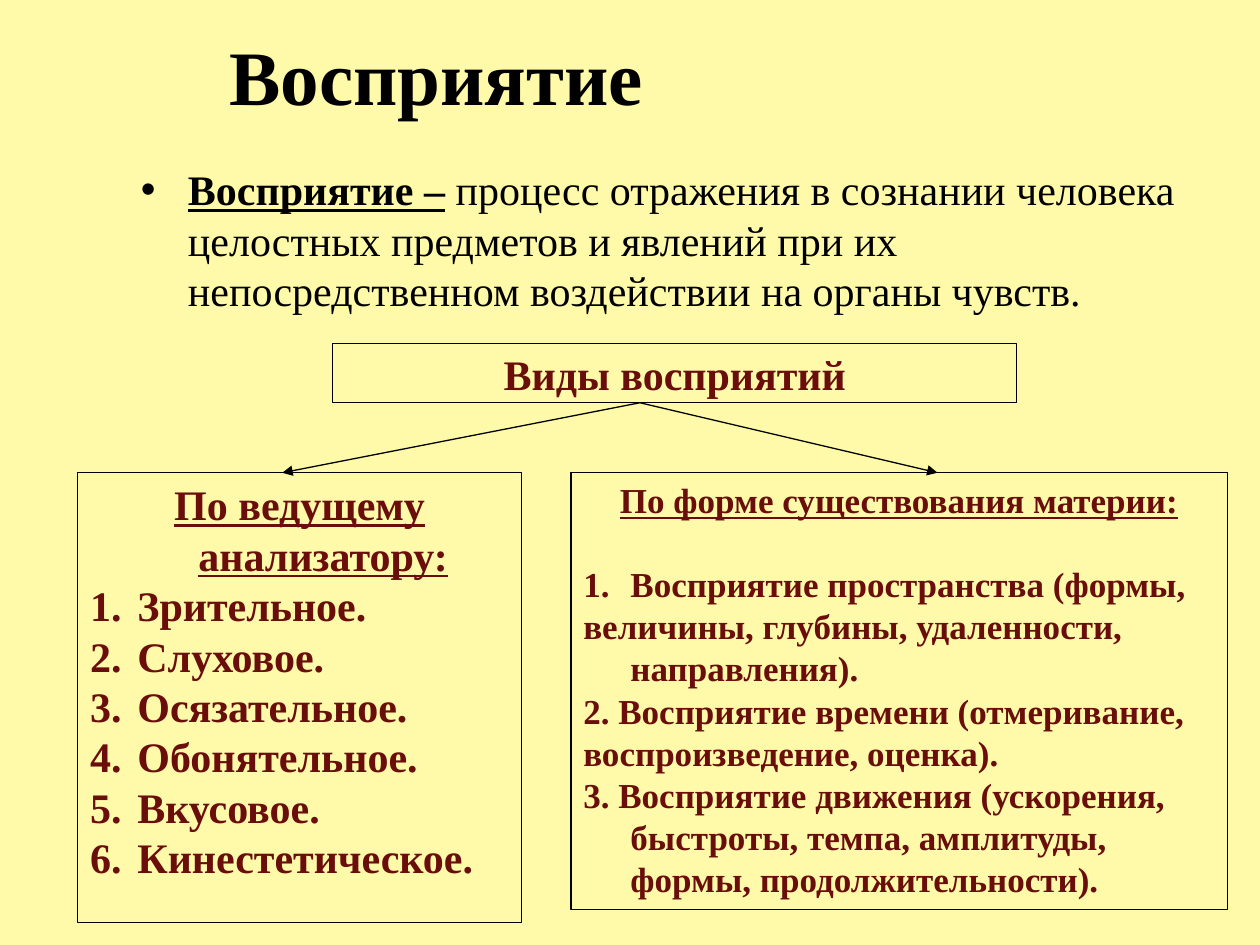
import pptx
import pptx.util
import pptx.dml.color
import pptx.enum.shapes
import pptx.enum.text
import pptx.oxml
import pptx.oxml.ns

Cm, Pt = pptx.util.Cm, pptx.util.Pt
Align = pptx.enum.text.PP_ALIGN
Anchor = pptx.enum.text.MSO_ANCHOR

PAPER, INK, WINE = "FFFAA9", "000000", "6A0E0C"
HANG = Cm(0.95)
DOT = ("a:buFont", {"typeface": "Arial"}), ("a:buChar", {"char": "•"})
NUMBER = (("a:buAutoNum", {"type": "arabicPeriod"}),)


def color(code):
    return pptx.dml.color.RGBColor.from_string(code)


def add_xml(parent, tag, **attrs):
    node = pptx.oxml.parse_xml(f"<{tag} {pptx.oxml.ns.nsdecls('a')}/>")
    for key, value in attrs.items():
        node.set(key, value)
    parent.append(node)


def write(para, text, size=24, ink=INK, bold=False, under=False,
          align=Align.LEFT, hang=False, marks=(), after=0):
    """Add one run to a paragraph and format both."""
    para.alignment = align
    para.space_before, para.space_after = Pt(0), Pt(after)
    props = para._p.get_or_add_pPr()
    if hang:
        props.set("marL", str(HANG))
        props.set("indent", str(-HANG))
    for tag, attrs in marks:
        add_xml(props, tag, **attrs)
    run = para.add_run()
    run.text = text
    font = run.font
    font.name, font.size = "Times New Roman", Pt(size)
    font.bold, font.underline = bold, under
    font.color.rgb = color(ink)


class Board:
    def __init__(self, deck):
        self.slide = deck.slides.add_slide(deck.slide_layouts[5])
        fill = self.slide.background.fill
        fill.solid()
        fill.fore_color.rgb = color(PAPER)

    def title(self, text, left, top, width, height):
        shape = self.slide.shapes.title
        shape.left, shape.top = Cm(left), Cm(top)
        shape.width, shape.height = Cm(width), Cm(height)
        shape.text_frame.vertical_anchor = Anchor.MIDDLE
        write(shape.text_frame.paragraphs[0], text, size=44, bold=True)

    def note(self, *place):
        shape = self.slide.shapes.add_textbox(*map(Cm, place))
        shape.text_frame.word_wrap = True
        return shape.text_frame.paragraphs[0]

    def box(self, lines, *place, fill=PAPER, anchor=Anchor.TOP, size=24):
        kind = pptx.enum.shapes.MSO_SHAPE.RECTANGLE
        shape = self.slide.shapes.add_shape(kind, *map(Cm, place))
        shape.shadow.inherit = False
        if fill:
            shape.fill.solid()
            shape.fill.fore_color.rgb = color(fill)
        else:
            shape.fill.background()
        shape.line.color.rgb = color(INK)
        shape.line.width = Pt(0.75)
        frame = shape.text_frame
        frame.word_wrap, frame.vertical_anchor = True, anchor
        for i, (text, style) in enumerate(lines):
            para = frame.add_paragraph() if i else frame.paragraphs[0]
            write(para, text, size=size, ink=WINE, bold=True, **style)

    def arrow(self, start, end):
        kind = pptx.enum.shapes.MSO_CONNECTOR.STRAIGHT
        line = self.slide.shapes.add_connector(kind, *map(Cm, start + end))
        line.line.color.rgb = color(INK)
        line.line.width = Pt(0.75)
        add_xml(line.line._get_or_add_ln(), "a:tailEnd", type="triangle")
        add_xml(line._element.spPr, "a:effectLst")


def main():
    deck = pptx.Presentation()
    deck.slide_width, deck.slide_height = Cm(25.4), Cm(19.05)
    board = Board(deck)

    # Title and definition
    board.title("Восприятие", 4.37, 0.41, 19.76, 2.18)
    para = board.note(2.59, 3.18, 21.54, 13.84)
    write(para, "Восприятие –", bold=True, under=True, hang=True, marks=DOT)
    write(para, " процесс отражения в сознании человека целостных предметов "
                "и явлений при их непосредственном воздействии на органы "
                "чувств.")

    # Heading of the scheme
    board.box([("Виды восприятий", {"align": Align.CENTER})],
              6.71, 6.93, 13.79, 1.19, anchor=Anchor.MIDDLE)

    # Two groups
    head = {"align": Align.CENTER, "under": True, "hang": True}
    plain = {"hang": True}
    item = {"hang": True, "marks": NUMBER}
    senses = ["Зрительное.", "Слуховое.", "Осязательное.", "Обонятельное.",
              "Вкусовое.", "Кинестетическое."]
    board.box([("По ведущему анализатору:", head)]
              + [(name, item) for name in senses],
              1.57, 9.53, 8.94, 9.07)
    forms = ["величины, глубины, удаленности, направления).",
             "2. Восприятие времени (отмеривание,",
             "воспроизведение, оценка).",
             "3. Восприятие движения (ускорения, быстроты, темпа, "
             "амплитуды, формы, продолжительности)."]
    board.box([("По форме существования материи:", {**head, "after": 24}),
               ("Восприятие пространства (формы,", item)]
              + [(text, plain) for text in forms],
              11.51, 9.53, 13.23, 8.81, fill=None, size=20)

    # Arrows from the heading to the groups
    for x in (5.69, 18.9):
        board.arrow((12.9, 8.12), (x, 9.53))

    deck.save("out.pptx")


if __name__ == "__main__":
    main()
